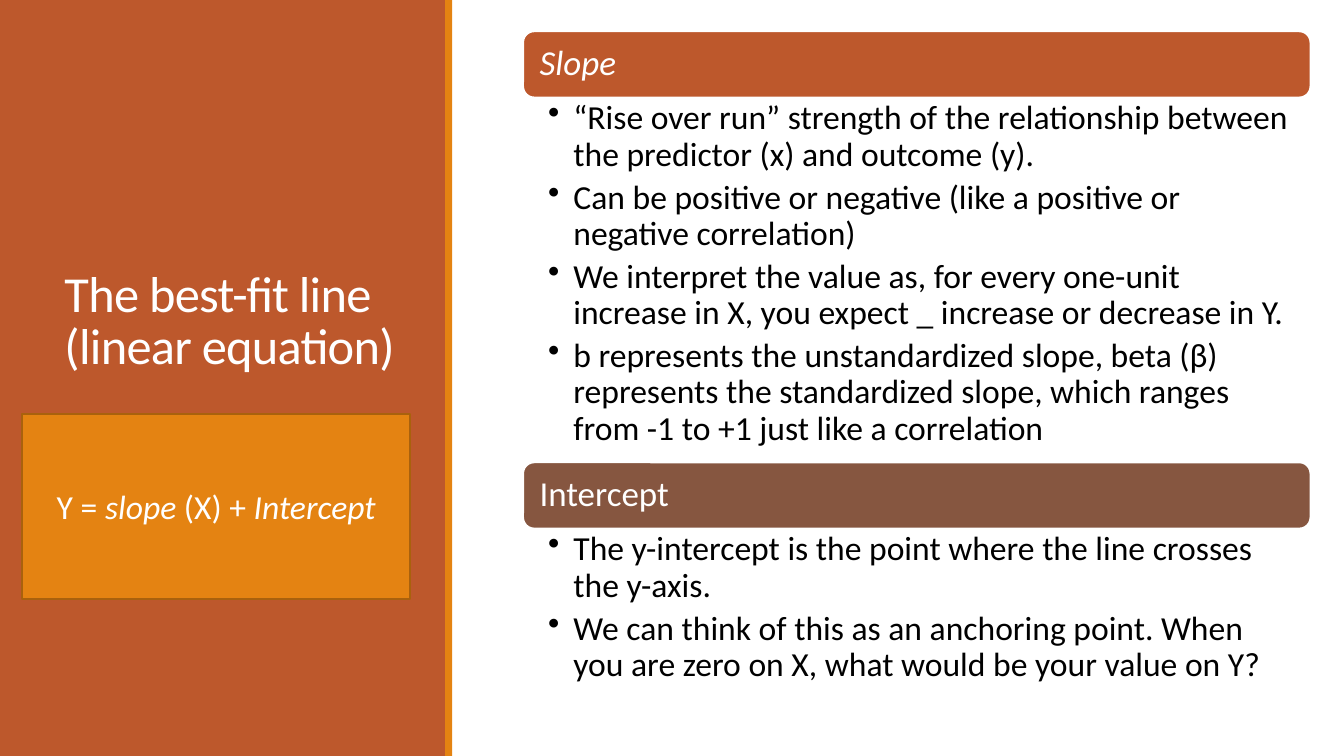
from lxml import etree
from pptx import Presentation
from pptx.dml.color import RGBColor
from pptx.enum import shapes, text
from pptx.oxml import ns
from pptx.util import Pt

RUST = RGBColor(0xBD, 0x58, 0x2C)
ORANGE = RGBColor(0xE4, 0x83, 0x12)
BROWN = RGBColor(0x86, 0x56, 0x40)
DARK_ORANGE = RGBColor(0xA9, 0x61, 0x0D)
WHITE = RGBColor(0xFF, 0xFF, 0xFF)
BLACK = RGBColor(0, 0, 0)
RECT = shapes.MSO_SHAPE.RECTANGLE
ROUNDED = shapes.MSO_SHAPE.ROUNDED_RECTANGLE


def add_box(kind, left, top, width, height, fill, line=None):
    sp = s.shapes.add_shape(kind, Pt(left), Pt(top), Pt(width), Pt(height))
    sp.shadow.inherit = False
    sp.fill.solid()
    sp.fill.fore_color.rgb = fill
    if line is None:
        sp.line.fill.background()
    else:
        sp.line.color.rgb = line
        sp.line.width = Pt(1.25)
    return sp


def set_font(p, size, color):
    p.font.name = "Calibri"
    p.font.size = Pt(size)
    p.font.color.rgb = color


prs = Presentation()
prs.slide_width, prs.slide_height = Pt(960), Pt(540)
s = prs.slides.add_slide(prs.slide_layouts[6])

add_box(RECT, 0, 0, 319, 540, RUST)
add_box(RECT, 318, 0, 5, 540, ORANGE)

sections = [
    ("Slope", True, RUST, 22.4, 260.6, [
        "“Rise over run” strength of the relationship between the predictor (x) and outcome (y).",
        "Can be positive or negative (like a positive or negative correlation)",
        "We interpret the value as, for every one-unit increase in X, you expect _ increase or decrease in Y.",
        "b represents the unstandardized slope, beta (β) represents the standardized slope, "
        "which ranges from -1 to +1 just like a correlation",
    ]),
    ("Intercept", False, BROWN, 330.3, 116, [
        "The y-intercept is the point where the line crosses the y-axis.",
        "We can think of this as an anchoring point. When you are zero on X, what would be your value on Y?",
    ]),
]
LEFT, WIDTH, HEADER_HEIGHT = 373.7, 562.3, 47.2

for heading, italic, color, top, body_height, points in sections:
    sp = add_box(ROUNDED, LEFT, top, WIDTH, HEADER_HEIGHT, color, WHITE)
    tf = sp.text_frame
    tf.margin_left = Pt(9.4)
    tf.vertical_anchor = text.MSO_ANCHOR.MIDDLE
    p = tf.paragraphs[0]
    p.text = heading
    p.alignment = text.PP_ALIGN.LEFT
    p.line_spacing = 0.9
    set_font(p, 25, WHITE)
    p.font.italic = italic

    sp = s.shapes.add_textbox(Pt(LEFT), Pt(top + HEADER_HEIGHT), Pt(WIDTH), Pt(body_height))
    tf = sp.text_frame
    tf.word_wrap = True
    tf.margin_left, tf.margin_right = Pt(17.9), Pt(13.7)
    tf.margin_top = tf.margin_bottom = Pt(2.4)
    for i, point in enumerate(points):
        p = tf.paragraphs[0] if i == 0 else tf.add_paragraph()
        p.text = point
        p.level = 1
        p.line_spacing = 0.9
        p.space_after = Pt(4.8)
        set_font(p, 24, BLACK)
        pPr = p._p.get_or_add_pPr()
        pPr.set("marL", str(Pt(18)))
        pPr.set("indent", str(-Pt(18)))
        bullet = etree.Element(ns.qn("a:buChar"), char="•")
        pPr.find(ns.qn("a:defRPr")).addprevious(bullet)

sp = add_box(RECT, 16, 295.5, 277, 132.5, ORANGE, DARK_ORANGE)
tf = sp.text_frame
tf.word_wrap = True
tf.vertical_anchor = text.MSO_ANCHOR.MIDDLE
p = tf.paragraphs[0]
p.alignment = text.PP_ALIGN.CENTER
set_font(p, 24, WHITE)
for term, italic in [("Y = ", False), ("slope", True), (" (X) + ", False), ("Intercept", True)]:
    r = p.add_run()
    r.text = term
    r.font.italic = italic

sp = s.shapes.add_textbox(Pt(39), Pt(41), Pt(260), Pt(454))
tf = sp.text_frame
tf.word_wrap = True
tf.vertical_anchor = text.MSO_ANCHOR.MIDDLE
tf.margin_bottom = Pt(78)
p = tf.paragraphs[0]
p.line_spacing = 0.85
set_font(p, 36, WHITE)
r = p.add_run()
r.text = "The best-fit line (linear equation)"
r._r.get_or_add_rPr().set("spc", "-50")

prs.save("out.pptx")
